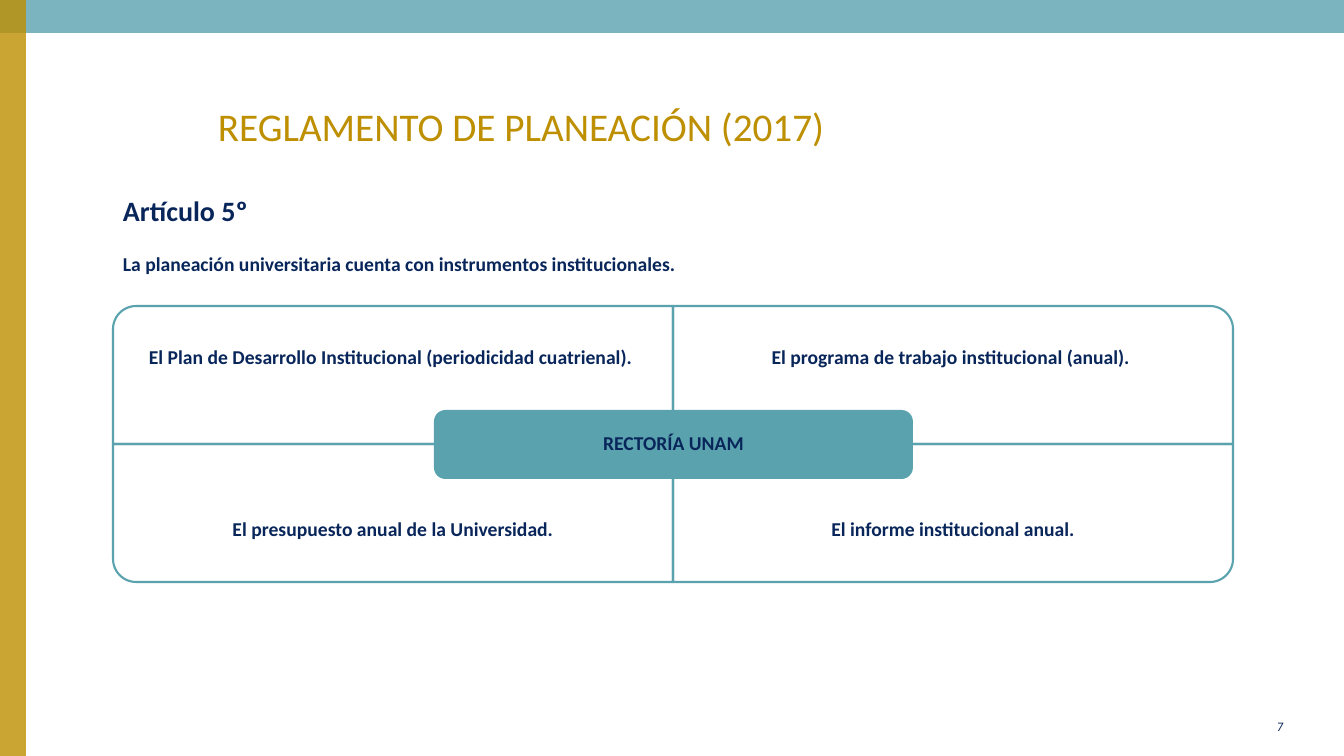
import pptx
import pptx.dml.color
import pptx.enum.shapes
import pptx.enum.text
import pptx.oxml.ns
import pptx.util
from lxml import etree

SHAPES = pptx.enum.shapes.MSO_SHAPE
ALIGN = pptx.enum.text.PP_ALIGN
TEAL, GOLD, NAVY = "5AA2AE", "BD8F01", "09265B"
EMU_PER_PX = 914400 / 100.8


def px(length):
    return pptx.util.Emu(round(length * EMU_PER_PX))


def color(hex_value):
    return pptx.dml.color.RGBColor.from_string(hex_value)


def write(shape, text, size=14, font="Calibri", ink=NAVY, bold=True,
          align=ALIGN.LEFT, spacing=1.0, insets=(10, 5)):
    frame = shape.text_frame
    frame.word_wrap = True
    frame.vertical_anchor = pptx.enum.text.MSO_ANCHOR.MIDDLE
    frame.margin_left = frame.margin_right = px(insets[0])
    frame.margin_top = frame.margin_bottom = px(insets[1])
    paragraph = frame.paragraphs[0]
    paragraph.alignment = align
    paragraph.line_spacing = spacing
    run = paragraph.add_run()
    run.text = text
    run.font.size = pptx.util.Pt(size)
    run.font.name = font
    run.font.bold = bold
    run.font.color.rgb = color(ink)


class SlideBuilder:
    label_style = {"align": ALIGN.CENTER, "spacing": 0.9, "insets": (11, 11)}

    def __init__(self, presentation):
        self.slide = presentation.slides.add_slide(presentation.slide_layouts[6])

    def shape(self, kind, left, top, width, height, fill=None, line=None, opacity=100):
        shape = self.slide.shapes.add_shape(kind, px(left), px(top), px(width), px(height))
        shape.shadow.inherit = False
        if fill:
            shape.fill.solid()
            shape.fill.fore_color.rgb = color(fill)
            if opacity < 100:
                tag = shape.fill._xPr.find(".//" + pptx.oxml.ns.qn("a:srgbClr"))
                etree.SubElement(tag, pptx.oxml.ns.qn("a:alpha"), val=str(opacity * 1000))
        else:
            shape.fill.background()
        if line:
            shape.line.color.rgb = color(line)
            shape.line.width = pptx.util.Pt(1.5)
        else:
            shape.line.fill.background()
        return shape

    def text(self, text, left, top, width, height, **style):
        box = self.slide.shapes.add_textbox(px(left), px(top), px(width), px(height))
        write(box, text, **style)

    def quadrant(self, text, column, row, rotation):
        width, height, label_height = 560, 138, 104
        left, top = 113 + column * width, 306 + row * height
        if rotation % 180:
            shift = (width - height) / 2
            bounds = (left + shift, top - shift, height, width)
        else:
            bounds = (left, top, width, height)
        outline = self.shape(SHAPES.ROUND_1_RECTANGLE, *bounds, line=TEAL)
        outline.rotation = rotation
        label_top = top + row * (height - label_height)
        self.text(text, left, label_top, width, label_height, **self.label_style)

    def hub(self, text, *bounds):
        write(self.shape(SHAPES.ROUNDED_RECTANGLE, *bounds, fill=TEAL), text, **self.label_style)


def main():
    presentation = pptx.Presentation()
    presentation.slide_width = px(1344)
    presentation.slide_height = px(756)
    builder = SlideBuilder(presentation)

    builder.shape(SHAPES.RECTANGLE, 0, 0, 1344, 33, fill=TEAL, opacity=80)
    builder.shape(SHAPES.RECTANGLE, 0, 0, 26, 756, fill=GOLD, opacity=80)
    builder.text("REGLAMENTO DE PLANEACIÓN (2017)", 208, 68, 1087, 115,
                 size=28, ink=GOLD, bold=False)
    builder.text("Artículo 5º", 113, 182, 239, 57, size=20)
    builder.text("La planeación universitaria cuenta con instrumentos institucionales.",
                 113, 226, 1155, 76)

    quadrants = [
        ("El Plan de Desarrollo Institucional (periodicidad cuatrienal). ", 0, 0, 270),
        ("El programa de trabajo institucional (anual). ", 1, 0, 0),
        ("El presupuesto anual de la Universidad.", 0, 1, 180),
        ("El informe institucional anual.", 1, 1, 90),
    ]
    for quadrant in quadrants:
        builder.quadrant(*quadrant)
    builder.hub("RECTORÍA UNAM", 434, 410, 479, 69)

    builder.text("7", 1234, 707, 60, 40, size=9, font="League Spartan",
                 bold=False, align=ALIGN.RIGHT)
    presentation.save("out.pptx")


if __name__ == "__main__":
    main()
